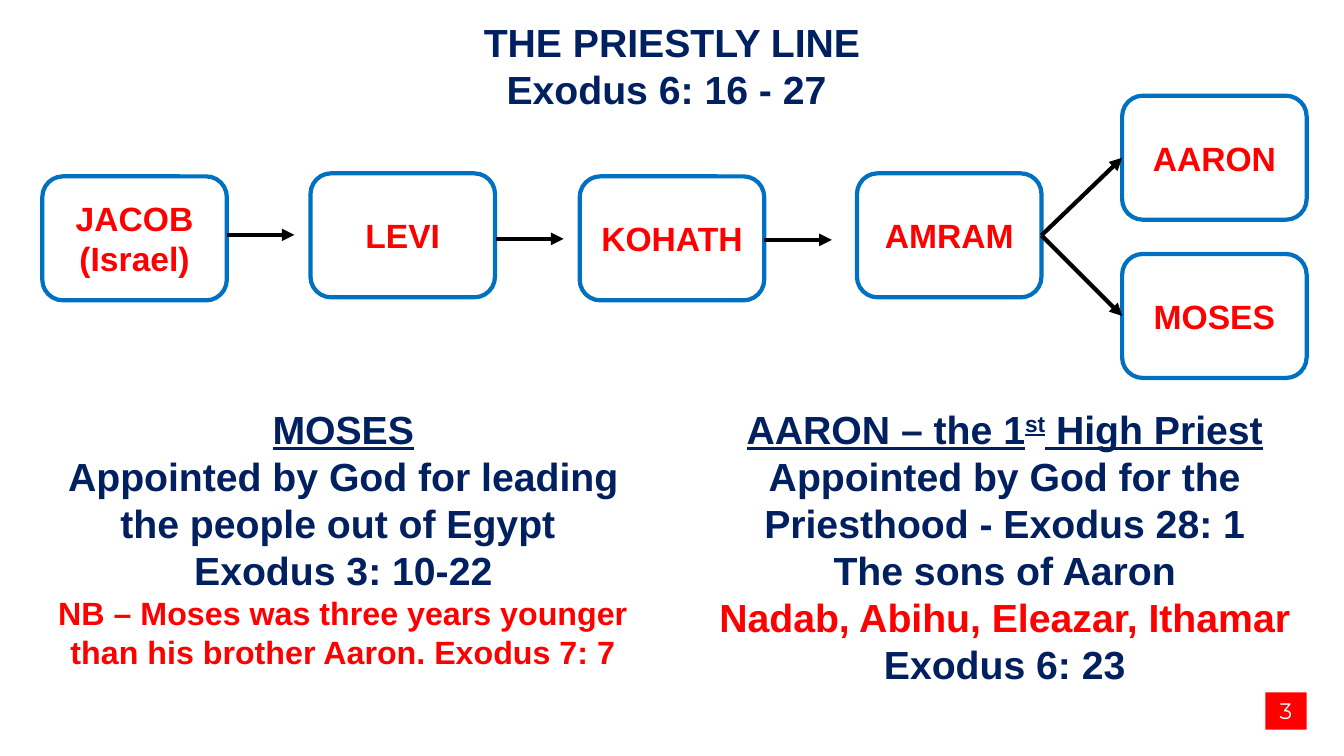
from lxml.etree import SubElement
from pptx import Presentation
from pptx.dml.color import RGBColor
from pptx.enum.shapes import MSO_CONNECTOR, MSO_SHAPE
from pptx.enum.text import MSO_ANCHOR, PP_ALIGN
from pptx.oxml.ns import qn
from pptx.util import Pt

SCALE = 9144
COLORS = {"navy": "002060", "red": "FF0000", "blue": "0070C0",
          "black": "000000", "white": "FFFFFF"}


def px(*nums):
    return [num * SCALE for num in nums]


def color(name):
    return RGBColor.from_string(COLORS[name])


def add_run(para, text, size=28, hue="navy", bold=True, under=False,
            raised=False, face="Arial"):
    run = para.add_run()
    run.text = text
    font = run.font
    font.name, font.size = face, Pt(size)
    font.bold, font.underline = bold, under
    font.color.rgb = color(hue)
    if raised:
        run._r.get_or_add_rPr().set("baseline", "30000")


class Page:
    def __init__(self, deck):
        self.slide = deck.slides.add_slide(deck.slide_layouts[5])
        self.shapes = self.slide.shapes
        self.width = 3

    def fill_text(self, frame, lines, anchor=MSO_ANCHOR.TOP, **style):
        frame.word_wrap = True
        frame.vertical_anchor = anchor
        for i, line in enumerate(lines):
            para = frame.paragraphs[0] if i == 0 else frame.add_paragraph()
            para.alignment = PP_ALIGN.CENTER
            for text, extra in line if isinstance(line, list) else [(line, {})]:
                add_run(para, text, **{**style, **extra})

    def title(self, lines, *area):
        head = self.shapes.title
        head.left, head.top, head.width, head.height = px(*area)
        self.fill_text(head.text_frame, lines)

    def text(self, lines, *area):
        box = self.shapes.add_textbox(*px(*area))
        self.fill_text(box.text_frame, lines)

    def shape(self, kind, area):
        item = self.shapes.add_shape(kind, *px(*area))
        item.shadow.inherit = False
        return item

    def person(self, lines, left, top):
        box = self.shape(MSO_SHAPE.ROUNDED_RECTANGLE, (left, top, 183, 123))
        box.fill.background()
        box.line.color.rgb = color("blue")
        box.line.width = Pt(self.width)
        self.fill_text(box.text_frame, lines, MSO_ANCHOR.MIDDLE,
                       size=24, hue="red")
        return box

    def arrow(self, *ends):
        link = self.shapes.add_connector(MSO_CONNECTOR.STRAIGHT, *px(*ends))
        link.line.color.rgb = color("black")
        link.line.width = Pt(self.width)
        SubElement(link.line._get_or_add_ln(), qn("a:tailEnd"), type="triangle")
        SubElement(link._element.spPr, qn("a:effectLst"))
        return link

    def branch(self, start, end):
        link = self.arrow(0, 0, 0, 0)
        link.begin_connect(start, 3)
        link.end_connect(end, 1)

    def badge(self, text, *area):
        box = self.shape(MSO_SHAPE.RECTANGLE, area)
        box.fill.solid()
        box.fill.fore_color.rgb = color("red")
        box.line.fill.background()
        self.fill_text(box.text_frame, [text], size=16, hue="white",
                       bold=False, face="Montserrat")


def main():
    deck = Presentation()
    deck.slide_width, deck.slide_height = px(1333, 750)
    page = Page(deck)
    page.title(["THE PRIESTLY LINE", "Exodus 6: 16 - 27 "], 0, 13, 1333, 104)

    page.person(["JACOB", "(Israel)"], 42, 175)
    page.person(["LEVI"], 308, 172)
    page.person(["KOHATH"], 575, 175)
    amram = page.person(["AMRAM"], 850, 172)
    for left, top in ((225, 233), (492, 237), (758, 238)):
        page.arrow(left, top, left + 67, top)
    for name, top in (("AARON", 95), ("MOSES", 252)):
        page.branch(amram, page.person([name], 1113, top))

    under = {"under": True}
    page.text([
        [("MOSES", under)],
        "Appointed by God for leading the people out of Egypt ",
        "Exodus 3: 10-22",
        [("NB – Moses was three years younger than his brother Aaron. "
          "Exodus 7: 7", {"size": 23, "hue": "red"})],
    ], 37, 397, 607, 276)
    page.text([
        [("AARON – the 1", under), ("st", {"under": True, "raised": True}),
         (" High Priest", under)],
        "Appointed by God for the Priesthood - Exodus 28: 1",
        "The sons of Aaron",
        [("Nadab, Abihu, Eleazar, Ithamar", {"hue": "red"})],
        "Exodus 6: 23",
    ], 693, 397, 607, 293)
    page.badge("3", 1255, 687, 41, 37)
    deck.save("out.pptx")


if __name__ == "__main__":
    main()
